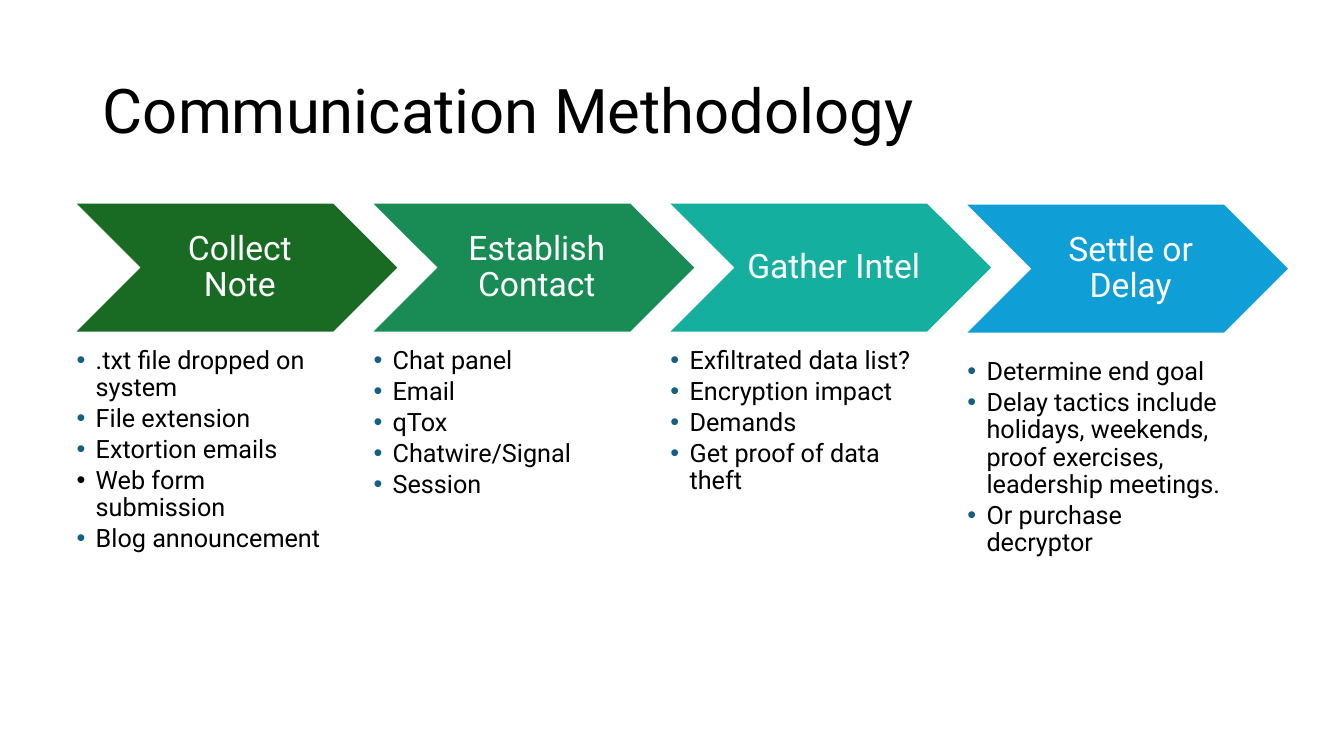
from dataclasses import dataclass

from lxml import etree
from pptx import Presentation
from pptx.dml.color import RGBColor
from pptx.enum import shapes, text
from pptx.oxml.ns import qn
from pptx.util import Inches, Pt

TITLE = "Communication Methodology"
STAGES = [
    ("Collect Note", "196B24", 0,
     [".txt file dropped on system", "File extension", "Extortion emails",
      "Web form submission", "Blog announcement"]),
    ("Establish Contact", "188C54", 0,
     ["Chat panel", "Email", "qTox", "Chatwire/Signal", "Session"]),
    ("Gather Intel", "15AF9F", 0,
     ["Exfiltrated data list?", "Encryption impact", "Demands",
      "Get proof of data theft"]),
    ("Settle or Delay", "0F9ED5", 0.11,
     ["Determine end goal",
      "Delay tactics include holidays, weekends, proof exercises, leadership meetings.",
      "Or purchase decryptor"]),
]
BLACK_BULLETS = {"Web form submission"}


@dataclass(frozen=True)
class Theme:
    font: str = "Roboto"
    ink: str = "000000"
    light: str = "FFFFFF"
    bullet: str = "156082"
    title_size: int = 44
    stage_size: int = 24
    step_size: int = 18
    leading: float = 0.9


THEME = Theme()
LEFT, PITCH = 0.76, 2.945
CHEVRON_TOP, CHEVRON_WIDTH, CHEVRON_HEIGHT = 2.02, 3.18, 1.27
STEPS_TOP, STEPS_WIDTH, STEPS_HEIGHT = 3.45, 2.54, 1.93
INDENT = Inches(0.19)


def style(paragraph, size, color, align):
    paragraph.alignment = align
    paragraph.line_spacing = THEME.leading
    for run in paragraph.runs:
        run.font.name = THEME.font
        run.font.size = Pt(size)
        run.font.color.rgb = RGBColor.from_string(color)


def set_frame(frame, insets, anchor):
    frame.word_wrap = True
    frame.vertical_anchor = anchor
    (frame.margin_left, frame.margin_top,
     frame.margin_right, frame.margin_bottom) = map(Inches, insets)


def add_bullet(paragraph, color):
    properties = paragraph._p.get_or_add_pPr()
    properties.set("marL", str(INDENT))
    properties.set("indent", str(-INDENT))
    bullet_color = etree.SubElement(properties, qn("a:buClr"))
    etree.SubElement(bullet_color, qn("a:srgbClr"), val=color)
    etree.SubElement(properties, qn("a:buFont"), typeface="Arial")
    etree.SubElement(properties, qn("a:buChar"), char="•")


def add_title(slide):
    title = slide.shapes.title
    title.left, title.top = Inches(0.92), Inches(0.4)
    title.width, title.height = Inches(11.5), Inches(1.45)
    title.text_frame.text = TITLE
    title.text_frame.vertical_anchor = text.MSO_ANCHOR.MIDDLE
    style(title.text_frame.paragraphs[0], THEME.title_size, THEME.ink,
          text.PP_ALIGN.LEFT)


def add_chevron(slide, left, top, name, color):
    chevron = slide.shapes.add_shape(
        shapes.MSO_SHAPE.CHEVRON, Inches(left), Inches(top),
        Inches(CHEVRON_WIDTH), Inches(CHEVRON_HEIGHT))
    chevron.shadow.inherit = False
    chevron.fill.solid()
    chevron.fill.fore_color.rgb = RGBColor.from_string(color)
    chevron.line.fill.background()
    chevron.text_frame.text = name
    set_frame(chevron.text_frame, (0.1, 0.04, 0.04, 0.04), text.MSO_ANCHOR.MIDDLE)
    style(chevron.text_frame.paragraphs[0], THEME.stage_size, THEME.light,
          text.PP_ALIGN.CENTER)


def add_steps(slide, left, top, steps):
    frame = slide.shapes.add_textbox(
        Inches(left), Inches(top), Inches(STEPS_WIDTH),
        Inches(STEPS_HEIGHT)).text_frame
    set_frame(frame, (0, 0, 0, 0), text.MSO_ANCHOR.TOP)
    frame.text = "\n".join(steps)
    for step in frame.paragraphs:
        add_bullet(step, THEME.ink if step.text in BLACK_BULLETS else THEME.bullet)
        style(step, THEME.step_size, THEME.ink, text.PP_ALIGN.LEFT)
        step.space_after = Pt(THEME.step_size * 0.15)


def main():
    """Build the four-stage communication slide."""
    deck = Presentation()
    deck.slide_width, deck.slide_height = Inches(13.33), Inches(7.5)
    slide = deck.slides.add_slide(deck.slide_layouts[5])
    add_title(slide)
    for column, (name, color, drop, steps) in enumerate(STAGES):
        left = LEFT + column * PITCH
        add_chevron(slide, left, CHEVRON_TOP + drop / 10, name, color)
        add_steps(slide, left, STEPS_TOP + drop, steps)
    deck.save("out.pptx")


if __name__ == "__main__":
    main()
